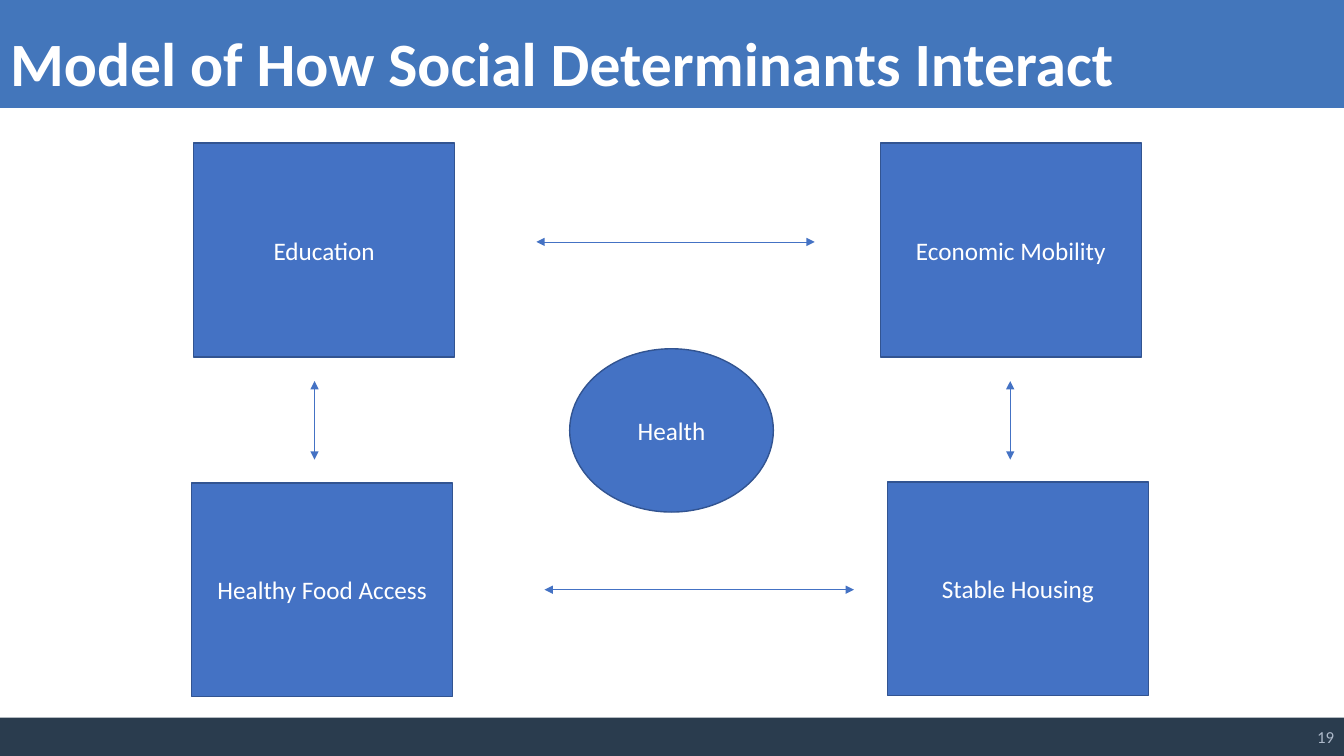
import pptx
import pptx.util
import pptx.dml.color
import pptx.enum.shapes
import pptx.enum.text
import pptx.oxml.ns
import lxml.etree
from dataclasses import dataclass

PX = 9144  # 100 px to the inch
WIDE, HIGH = 1333, 750
SHAPE = pptx.enum.shapes.MSO_SHAPE
ALIGN = pptx.enum.text.PP_ALIGN
ANCHOR = pptx.enum.text.MSO_ANCHOR


@dataclass(frozen=True)
class Theme:
    font: str = "Calibri"
    head: str = "4376BB"
    foot: str = "2A3C4E"
    box: str = "4472C4"
    edge: str = "325491"
    white: str = "FFFFFF"
    pale: str = "ADB9CA"
    large: int = 44
    base: int = 18
    small: int = 12


def rgb(code):
    return pptx.dml.color.RGBColor.from_string(code)


def write(frame, text, font, size, color, bold=False,
          align=ALIGN.LEFT, anchor=ANCHOR.MIDDLE):
    frame.word_wrap = True
    frame.auto_size = pptx.enum.text.MSO_AUTO_SIZE.NONE
    frame.vertical_anchor = anchor
    frame.text = text
    para = frame.paragraphs[0]
    para.alignment = align
    style = para.runs[0].font
    style.name, style.size, style.bold = font, pptx.util.Pt(size), bold
    style.color.rgb = rgb(color)


class Board:
    def __init__(self, slide, theme):
        self.slide, self.theme = slide, theme
        self.shapes = slide.shapes

    def shape(self, kind, area, fill, edge=None):
        item = self.shapes.add_shape(kind, *(n * PX for n in area))
        item.shadow.inherit = False
        item.fill.solid()
        item.fill.fore_color.rgb = rgb(fill)
        if edge:
            item.line.color.rgb = rgb(edge)
            item.line.width = pptx.util.Pt(1)
        else:
            item.line.fill.background()
        return item

    def node(self, text, area, kind=SHAPE.RECTANGLE):
        look = self.theme
        item = self.shape(kind, area, look.box, look.edge)
        write(item.text_frame, text, look.font, look.base, look.white,
              align=ALIGN.CENTER)

    def arrow(self, *ends):
        """Draw a line with a triangle at both ends."""
        line = self.shapes.add_connector(
            pptx.enum.shapes.MSO_CONNECTOR.STRAIGHT, *(n * PX for n in ends))
        line.line.color.rgb = rgb(self.theme.box)
        line.line.width = pptx.util.Pt(0.5)
        name, add = pptx.oxml.ns.qn, lxml.etree.SubElement
        props = line._element.find(name("p:spPr"))
        stroke = props.find(name("a:ln"))
        for tag in ("a:headEnd", "a:tailEnd"):
            add(stroke, name(tag), type="triangle")
        add(props, name("a:effectLst"))

    def title(self, text, area):
        """Fill the title placeholder and bring it to the front."""
        look, item = self.theme, self.shapes.title
        item.left, item.top, item.width, item.height = (n * PX for n in area)
        write(item.text_frame, text, look.font, look.large, look.white,
              bold=True, anchor=ANCHOR.TOP)
        item._element.getparent().append(item._element)

    def label(self, text, area):
        look = self.theme
        item = self.shapes.add_textbox(*(n * PX for n in area))
        write(item.text_frame, text, look.font, look.small, look.pale,
              align=ALIGN.RIGHT)


def main():
    deck = pptx.Presentation()
    deck.slide_width, deck.slide_height = WIDE * PX, HIGH * PX
    look = Theme()
    board = Board(deck.slides.add_slide(deck.slide_layouts[5]), look)

    board.shape(SHAPE.RECTANGLE, (0, 0, WIDE, 107), look.head)
    board.shape(SHAPE.RECTANGLE, (0, 712, WIDE, 38), look.foot)

    for text, left, top in (("Education", 192, 142),
                            ("Economic Mobility", 873, 142),
                            ("Healthy Food Access", 190, 479),
                            ("Stable Housing", 880, 478)):
        board.node(text, (left, top, 259, 212))
    board.node("Health", (565, 346, 202, 162), SHAPE.OVAL)

    for left, right, y in ((532, 808, 240), (540, 847, 585)):
        board.arrow(left, y, right, y)
    for x in (312, 1002):
        board.arrow(x, 378, x, 456)

    board.title("Model of How Social Determinants Interact",
                (0, 20, WIDE, 84))
    board.label("19", (1034, 711, 299, 40))
    deck.save("out.pptx")


if __name__ == "__main__":
    main()
